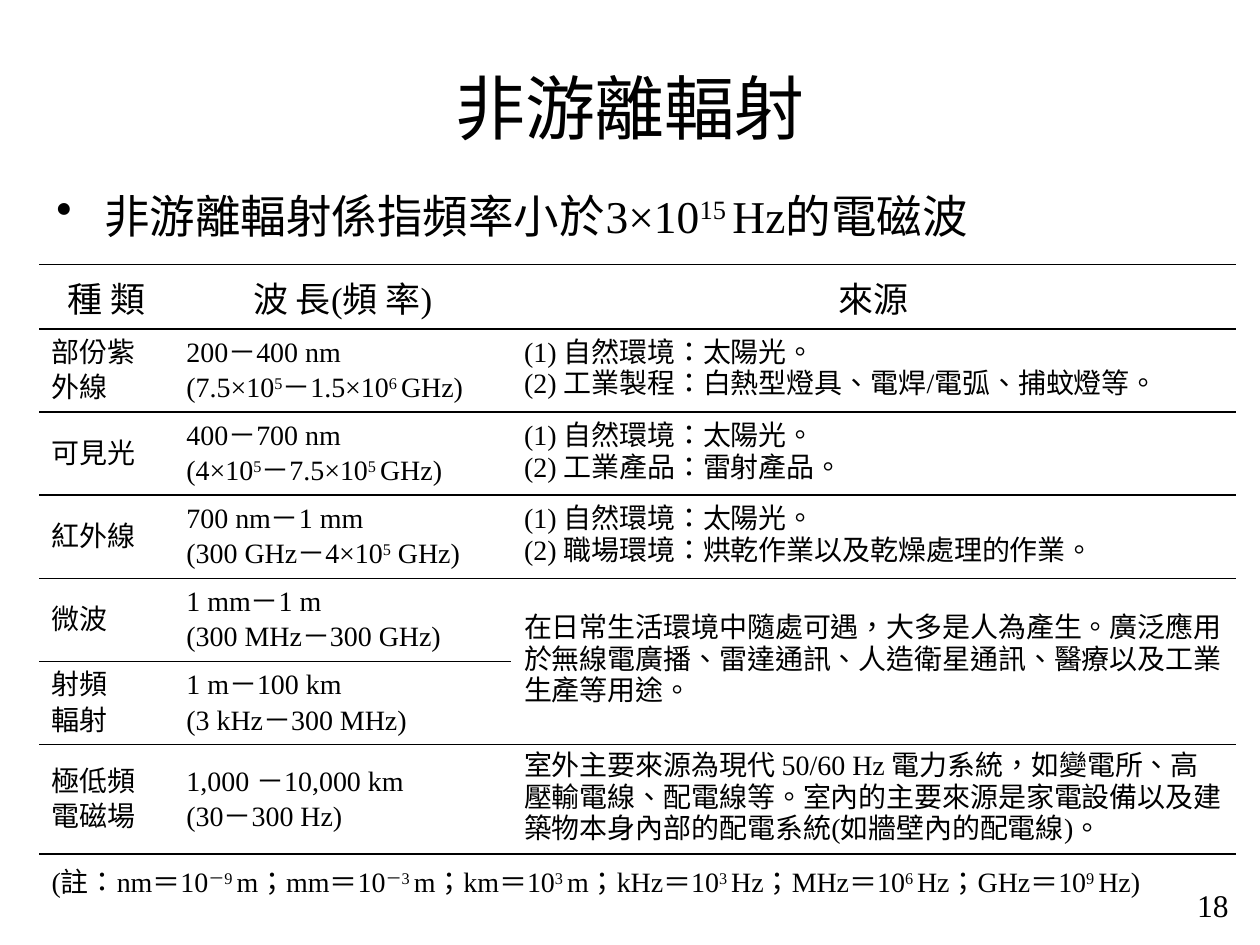
from lxml.etree import SubElement
from pptx import Presentation
from pptx.dml.color import RGBColor
from pptx.enum.lang import MSO_LANGUAGE_ID
from pptx.enum.text import MSO_ANCHOR, PP_ALIGN
from pptx.oxml.ns import qn
from pptx.util import Inches, Pt

COLORS = {"ink": "000000"}
FONT = "Times New Roman"
COLS = [1.07, 2.68, 5.75]
ROWS = [0.51] + [0.66] * 5 + [0.87, 0.36]
HEAD = ["種 類", "波 長(頻 率)", "來源"]
SUN = "(1) 自然環境：太陽光。"
BODY = [
    [["部份紫外線"], ["200－400 nm", "(7.5×10^5^－1.5×10^6 ^GHz)"],
     [SUN, "(2) 工業製程：白熱型燈具、電焊/電弧、捕蚊燈等。"]],
    [["可見光"], ["400－700 nm", "(4×10^5^－7.5×10^5 ^GHz)"],
     [SUN, "(2) 工業產品：雷射產品。"]],
    [["紅外線"], ["700 nm－1 mm", "(300 GHz－4×10^5^ GHz)"],
     [SUN, "(2) 職場環境：烘乾作業以及乾燥處理的作業。"]],
    [["微波"], ["1 mm－1 m", "(300 MHz－300 GHz)"],
     ["在日常生活環境中隨處可遇，大多是人為產生。廣泛應用於無線電廣播、"
      "雷達通訊、人造衛星通訊、醫療以及工業生產等用途。"]],
    [["射頻", "輻射"], ["1 m－100 km", "(3 kHz－300 MHz)"], []],
    [["極低頻電磁場"], ["1,000 －10,000 km", "(30－300 Hz)"],
     ["室外主要來源為現代 50/60 Hz 電力系統，如變電所、高壓輸電線、配電線等。"
      "室內的主要來源是家電設備以及建築物本身內部的配電系統(如牆壁內的配電線)。"]],
]
NOTE = ("(註：nm＝10^－9 ^m；mm＝10^－3 ^m；km＝10^3 ^m；kHz＝10^3 ^Hz；"
        "MHz＝10^6 ^Hz；GHz＝10^9 ^Hz)")


def write(frame, lines, size, align=PP_ALIGN.LEFT, gap=None):
    """Fill a text frame line by line; carets enclose superscripts."""
    frame.word_wrap = True
    for i, line in enumerate(lines):
        para = frame.add_paragraph() if i else frame.paragraphs[0]
        para.alignment = align
        if gap:
            para.line_spacing = Pt(gap)
        for j, part in enumerate(line.split("^")):
            run = para.add_run()
            run.text = part
            font = run.font
            font.name, font.size = FONT, Pt(size)
            font.language_id = MSO_LANGUAGE_ID.TRADITIONAL_CHINESE
            font.color.rgb = RGBColor.from_string(COLORS["ink"])
            if j % 2:
                font._element.set("baseline", "30000")


def add_text(slide, box, line, size, align, anchor=MSO_ANCHOR.MIDDLE):
    """Place one line of text in a box and return its paragraph."""
    frame = slide.shapes.add_textbox(*map(Inches, box)).text_frame
    frame.vertical_anchor = anchor
    write(frame, [line], size, align)
    return frame.paragraphs[0]


def add_point(slide, box, line):
    """Place a bulleted line with a hanging indent."""
    para = add_text(slide, box, line, 26, PP_ALIGN.LEFT, MSO_ANCHOR.TOP)
    para.space_before = Pt(5)
    props = para._p.get_or_add_pPr()
    props.set("marL", str(Inches(0.38)))
    props.set("indent", str(Inches(-0.38)))
    SubElement(props, qn("a:buChar")).set("char", "•")


def style(cell, last):
    """Rule a cell above and below, leaving the last row open."""
    props = cell._tc.get_or_add_tcPr()
    for side in "LRTB":
        line = SubElement(props, qn("a:ln" + side))
        if side in "LR" or (last and side == "B"):
            SubElement(line, qn("a:noFill"))
        else:
            line.set("w", str(Pt(1)))
            fill = SubElement(line, qn("a:solidFill"))
            SubElement(fill, qn("a:srgbClr")).set("val", COLORS["ink"])
    cell.fill.background()
    cell.vertical_anchor = MSO_ANCHOR.TOP if last else MSO_ANCHOR.MIDDLE


def add_grid(slide, left, top):
    """Build the table of radiation types."""
    size = len(ROWS), len(COLS)
    box = left, top, sum(COLS), sum(ROWS)
    table = slide.shapes.add_table(*size, *map(Inches, box)).table
    table.first_row = table.horz_banding = False
    for col, width in zip(table.columns, COLS):
        col.width = Inches(width)
    for row, height in zip(table.rows, ROWS):
        row.height = Inches(height)
    end = len(ROWS) - 1
    for r in range(len(ROWS)):
        for c in range(len(COLS)):
            style(table.cell(r, c), r == end)
    table.cell(4, 2).merge(table.cell(5, 2))
    table.cell(end, 0).merge(table.cell(end, 2))
    for c, name in enumerate(HEAD):
        write(table.cell(0, c).text_frame, [name], 20, PP_ALIGN.CENTER)
    for r, row in enumerate(BODY, 1):
        for c, lines in enumerate(row):
            write(table.cell(r, c).text_frame, lines, 16, gap=18 if c == 2 else 20)
    write(table.cell(end, 0).text_frame, [NOTE], 16)


def main():
    """Build and save the slide."""
    deck = Presentation()
    deck.slide_width, deck.slide_height = Inches(10), Inches(7.5)
    slide = deck.slides.add_slide(deck.slide_layouts[6])
    add_text(slide, (0.5, 0.22, 9, 1.25), "非游離輻射", 40, PP_ALIGN.CENTER)
    add_point(slide, (0.35, 1.44, 8.9, 0.58), "非游離輻射係指頻率小於3×10^15 ^Hz的電磁波")
    add_grid(slide, 0.31, 2.1)
    add_text(slide, (7.52, 6.98, 2.33, 0.4), "18", 18, PP_ALIGN.RIGHT)
    deck.save("out.pptx")


if __name__ == "__main__":
    main()
